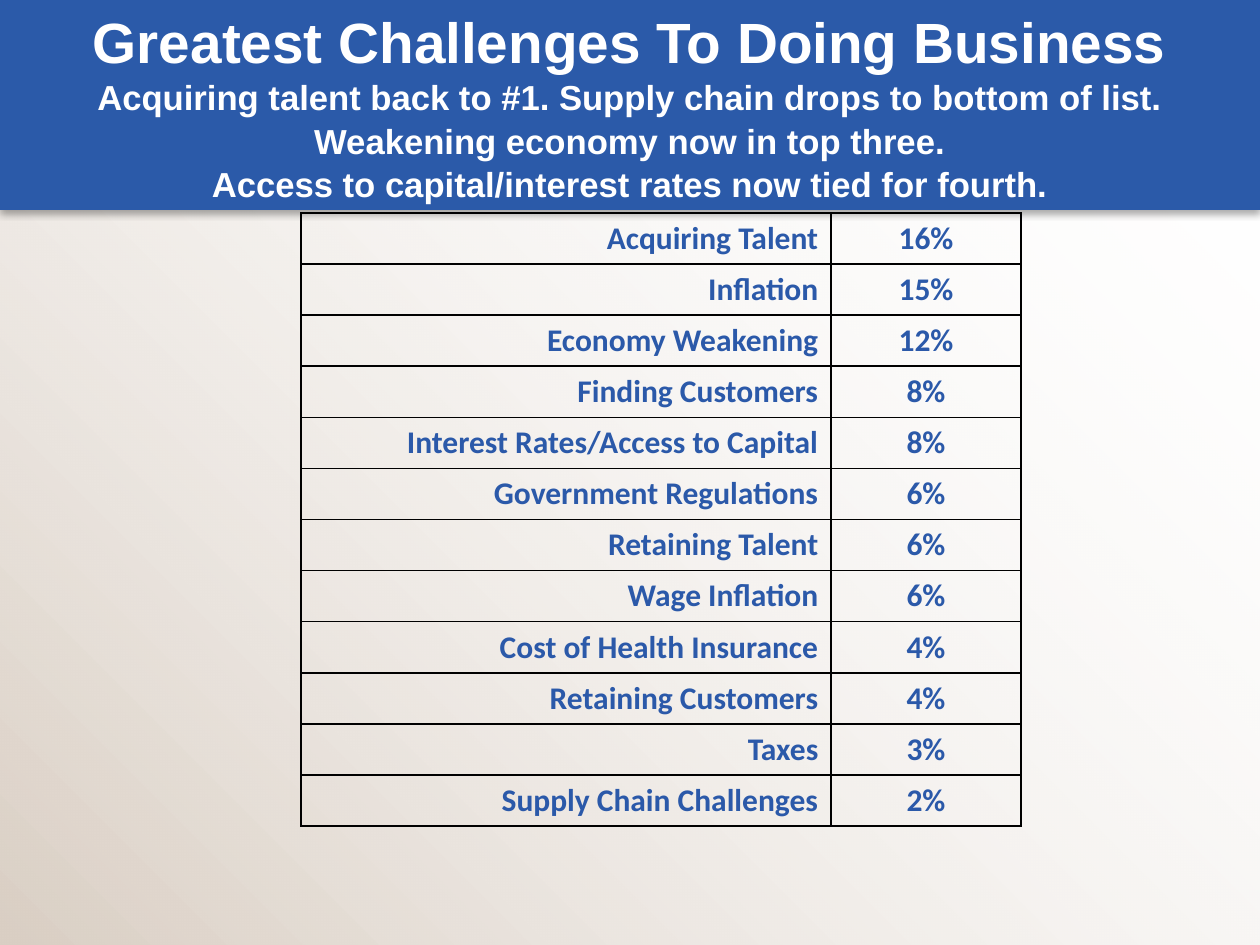
from copy import deepcopy
from dataclasses import dataclass

from lxml.etree import SubElement
from pptx import Presentation
from pptx.dml.color import RGBColor
from pptx.enum.shapes import MSO_SHAPE
from pptx.enum.text import MSO_ANCHOR, MSO_AUTO_SIZE, PP_ALIGN
from pptx.oxml import parse_xml
from pptx.oxml.ns import nsdecls, qn
from pptx.util import Pt


@dataclass(frozen=True)
class Theme:
    white: RGBColor = RGBColor(0xFF, 0xFF, 0xFF)
    sand: RGBColor = RGBColor(0xDA, 0xCF, 0xC4)
    banner: RGBColor = RGBColor(0x2B, 0x5A, 0xA9)
    table_text: RGBColor = RGBColor(0x2B, 0x59, 0xA9)
    border: str = "000000"
    title_font: str = "Arial"
    table_font: str = "Calibri"
    title_size: float = 32.4
    subtitle_size: float = 19.8
    table_size: float = 18


THEME = Theme()
SLIDE_WIDTH, SLIDE_HEIGHT = 720, 540
BANNER_HEIGHT = 120

TITLE_LINES = [
    ("Greatest Challenges To Doing Business", THEME.title_size),
    ("Acquiring talent back to #1. Supply chain drops to bottom of list.", THEME.subtitle_size),
    ("Weakening economy now in top three.", THEME.subtitle_size),
    ("Access to capital/interest rates now tied for fourth.", THEME.subtitle_size),
]
CHALLENGES = [
    ("Acquiring Talent", "16%"),
    ("Inflation", "15%"),
    ("Economy Weakening", "12%"),
    ("Finding Customers", "8%"),
    ("Interest Rates/Access to Capital", "8%"),
    ("Government Regulations", "6%"),
    ("Retaining Talent", "6%"),
    ("Wage Inflation", "6%"),
    ("Cost of Health Insurance", "4%"),
    ("Retaining Customers", "4%"),
    ("Taxes", "3%"),
    ("Supply Chain Challenges", "2%"),
]


def apply_format(target, values):
    for name, value in values.items():
        setattr(target, name, value)


def format_font(font, name, size, color):
    apply_format(font, {"name": name, "size": Pt(size), "bold": True})
    font.color.rgb = color


def add_rectangle(slide, left, top, width, height):
    shape = slide.shapes.add_shape(
        MSO_SHAPE.RECTANGLE, Pt(left), Pt(top), Pt(width), Pt(height))
    shape.shadow.inherit = False
    shape.line.fill.background()
    return shape


def add_backdrop(slide, left, top, width, height):
    shape = add_rectangle(slide, left, top, width, height)
    shape.fill.gradient()
    shape.fill.gradient_angle = 45
    for stop, color in zip(shape.fill.gradient_stops, (THEME.sand, THEME.white)):
        stop.color.rgb = color
    # The white end fades out completely
    last_color = list(shape.element.spPr.iter(qn("a:srgbClr")))[-1]
    SubElement(last_color, qn("a:alpha"), val="0")


def add_banner(slide, left, top, width, height):
    bar = add_rectangle(slide, left, top, width, height)
    bar.fill.solid()
    bar.fill.fore_color.rgb = THEME.banner
    # Soft shadow below the bar
    effects = bar.element.spPr.find(qn("a:effectLst"))
    effects.append(parse_xml(
        f'<a:outerShdw {nsdecls("a")} blurRad="{Pt(4)}" dist="{Pt(2.2)}" dir="5400000" '
        'rotWithShape="0"><a:srgbClr val="000000"><a:alpha val="32000"/></a:srgbClr>'
        '</a:outerShdw>'))

    # Title on top of the bar
    title = slide.shapes.title
    title.element.getparent().append(title.element)
    apply_format(title, {"left": Pt(left + 31), "top": Pt(top + 14.5),
                         "width": Pt(657.5), "height": Pt(90)})
    frame = title.text_frame
    apply_format(frame, {
        "word_wrap": True, "auto_size": MSO_AUTO_SIZE.NONE,
        "vertical_anchor": MSO_ANCHOR.MIDDLE,
        "margin_left": Pt(3.6), "margin_right": Pt(3.6),
        "margin_top": Pt(3.6), "margin_bottom": Pt(3.6)})
    paragraph = frame.paragraphs[0]
    apply_format(paragraph, {"alignment": PP_ALIGN.CENTER, "line_spacing": 1.04,
                             "space_before": Pt(0)})
    for index, (text, size) in enumerate(TITLE_LINES):
        if index:
            paragraph.add_line_break()
        run = paragraph.add_run()
        run.text = text
        format_font(run.font, THEME.title_font, size, THEME.white)
    # Each break takes the type size of the line it ends
    for line_break in paragraph._p.findall(qn("a:br")):
        line_break.append(deepcopy(line_break.getprevious().find(qn("a:rPr"))))


def set_borders(cell):
    properties = cell._tc.get_or_add_tcPr()
    for position, side in enumerate(("lnL", "lnR", "lnT", "lnB")):
        properties.insert(position, parse_xml(
            f'<a:{side} {nsdecls("a")} w="{Pt(1)}"><a:solidFill>'
            f'<a:srgbClr val="{THEME.border}"/></a:solidFill></a:{side}>'))


def add_challenge_table(slide, left, top, column_widths, row_height):
    frame = slide.shapes.add_table(
        len(CHALLENGES), len(column_widths), Pt(left), Pt(top),
        Pt(sum(column_widths)), Pt(row_height * len(CHALLENGES)))
    table = frame.table
    apply_format(table, {"first_row": False, "horz_banding": False})
    for column, width in zip(table.columns, column_widths):
        column.width = Pt(width)
    alignments = (PP_ALIGN.RIGHT, PP_ALIGN.CENTER)
    for row, values in zip(table.rows, CHALLENGES):
        row.height = Pt(row_height)
        for cell, text, alignment in zip(row.cells, values, alignments):
            cell.fill.background()
            set_borders(cell)
            paragraph = cell.text_frame.paragraphs[0]
            paragraph.alignment = alignment
            run = paragraph.add_run()
            run.text = text
            format_font(run.font, THEME.table_font, THEME.table_size, THEME.table_text)


def main():
    presentation = Presentation()
    apply_format(presentation, {"slide_width": Pt(SLIDE_WIDTH),
                                "slide_height": Pt(SLIDE_HEIGHT)})
    slide = presentation.slides.add_slide(presentation.slide_layouts[5])
    add_backdrop(slide, 0, 0, SLIDE_WIDTH, SLIDE_HEIGHT)
    add_banner(slide, 0, 0, SLIDE_WIDTH, BANNER_HEIGHT)
    add_challenge_table(slide, 172, BANNER_HEIGHT + 1.7, (302.8, 108.7), 29.2)
    presentation.save("out.pptx")


if __name__ == "__main__":
    main()
